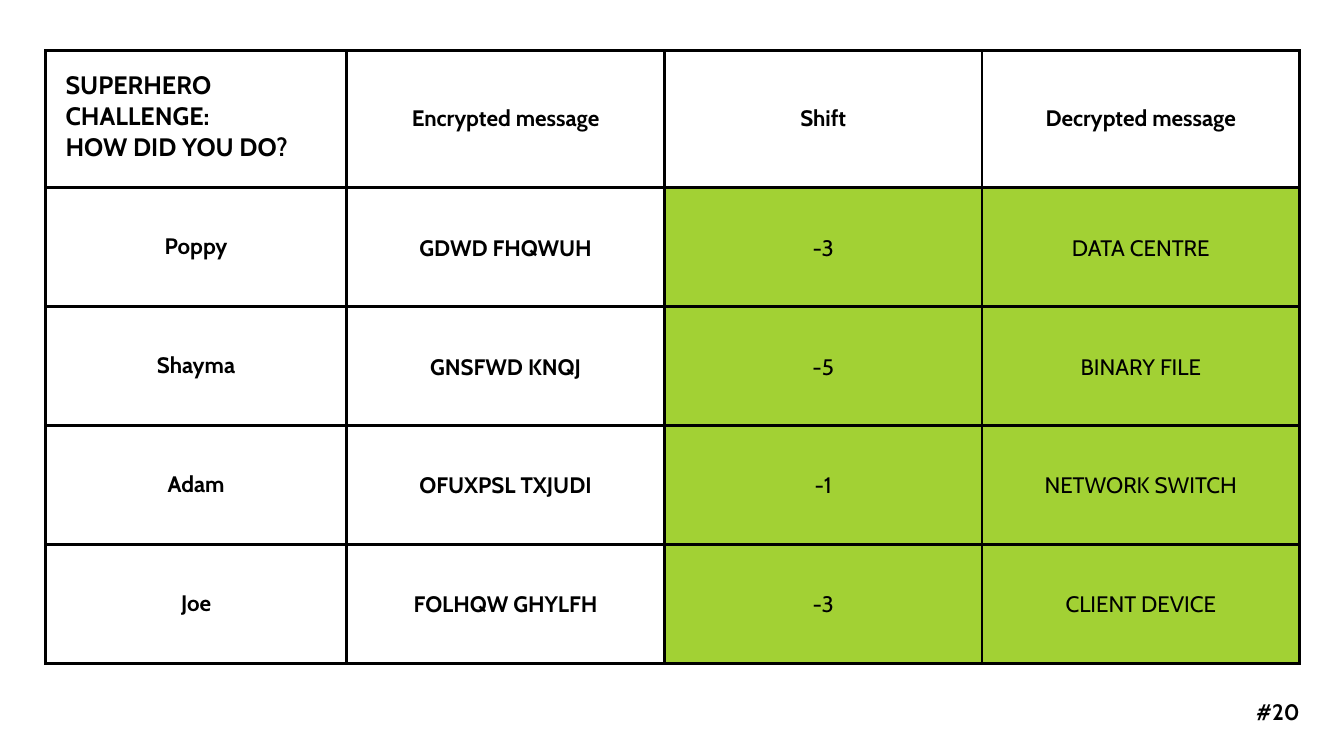
from dataclasses import dataclass
from lxml.etree import SubElement
from pptx import Presentation
from pptx.dml.color import RGBColor as RGB
from pptx.enum.text import MSO_ANCHOR as Anchor, PP_ALIGN as Align
from pptx.oxml.ns import qn
from pptx.util import Inches, Pt

HEAD = ("SUPERHERO CHALLENGE:\vHOW DID YOU DO?", "Encrypted message", "Shift", "Decrypted message")
BODY = [
    ("Poppy", "GDWD FHQWUH", "-3", "DATA CENTRE"),
    ("Shayma", "GNSFWD KNQJ", "-5", "BINARY FILE"),
    ("Adam", "OFUXPSL TXJUDI", "-1", "NETWORK SWITCH"),
    ("Joe", "FOLHQW GHYLFH", "-3", "CLIENT DEVICE"),
]
PAGE = "#20"


@dataclass(frozen=True)
class Theme:
    font: str = "Cabin"
    ink: str = "000000"
    paper: str = "FFFFFF"
    answer: str = "A2D134"
    title: float = 18
    text: float = 16
    lead: float = 21
    rule: float = 2.25


LOOK = Theme()
WIDE, HIGH = 13.33, 7.5
LEFT, TOP = 0.45, 0.5
COLS = [2.99] + [3.15] * 3
ROWS = [1.36] + [1.18] * len(BODY)
SPAN = sum(COLS)


def style(para, size, bold, align):
    para.alignment = align
    font = para.font
    font.name, font.size, font.bold = LOOK.font, Pt(size), bold
    font.color.rgb = RGB.from_string(LOOK.ink)


def border(cell):
    props = cell._tc.get_or_add_tcPr()
    for side in "LRTB":
        line = SubElement(props, qn(f"a:ln{side}"), w=str(Pt(LOOK.rule)))
        fill = SubElement(line, qn("a:solidFill"))
        SubElement(fill, qn("a:srgbClr"), val=LOOK.ink)


def pad(cell, side, end):
    cell.margin_left = cell.margin_right = Inches(side)
    cell.margin_top = cell.margin_bottom = Inches(end)


def fill_cell(cell, text, row, col):
    title = row == col == 0
    answer = row > 0 and col > 1
    border(cell)
    cell.fill.solid()
    cell.fill.fore_color.rgb = RGB.from_string(LOOK.answer if answer else LOOK.paper)
    cell.vertical_anchor = Anchor.TOP if title else Anchor.MIDDLE
    pad(cell, *((0.2, 0.2) if title else (0.1, 0.05) if answer else (0.2, 0.08)))
    cell.text = text
    para = cell.text_frame.paragraphs[0]
    if row and col:
        para.line_spacing = Pt(LOOK.lead)
    style(para, LOOK.title if title else LOOK.text, not answer, Align.LEFT if title else Align.CENTER)


def add_grid(slide):
    box = map(Inches, (LEFT, TOP, SPAN, sum(ROWS)))
    grid = slide.shapes.add_table(len(ROWS), len(COLS), *box).table
    grid.first_row = grid.horz_banding = False
    for col, width in zip(grid.columns, COLS):
        col.width = Inches(width)
    for row, height in zip(grid.rows, ROWS):
        row.height = Inches(height)
    for r, line in enumerate([HEAD, *BODY]):
        for c, text in enumerate(line):
            fill_cell(grid.cell(r, c), text, r, c)


def add_page(slide):
    width = 0.88
    box = slide.shapes.add_textbox(*map(Inches, (LEFT + SPAN - width, 6.87, width, 0.37)))
    frame = box.text_frame
    frame.word_wrap = True
    pad(frame, 0, 0)
    frame.vertical_anchor = Anchor.MIDDLE
    frame.text = PAGE
    style(frame.paragraphs[0], LOOK.text, True, Align.RIGHT)


def main():
    deck = Presentation()
    deck.slide_width, deck.slide_height = Inches(WIDE), Inches(HIGH)
    slide = deck.slides.add_slide(deck.slide_layouts[6])
    add_page(slide)
    add_grid(slide)
    deck.save("out.pptx")


if __name__ == "__main__":
    main()
